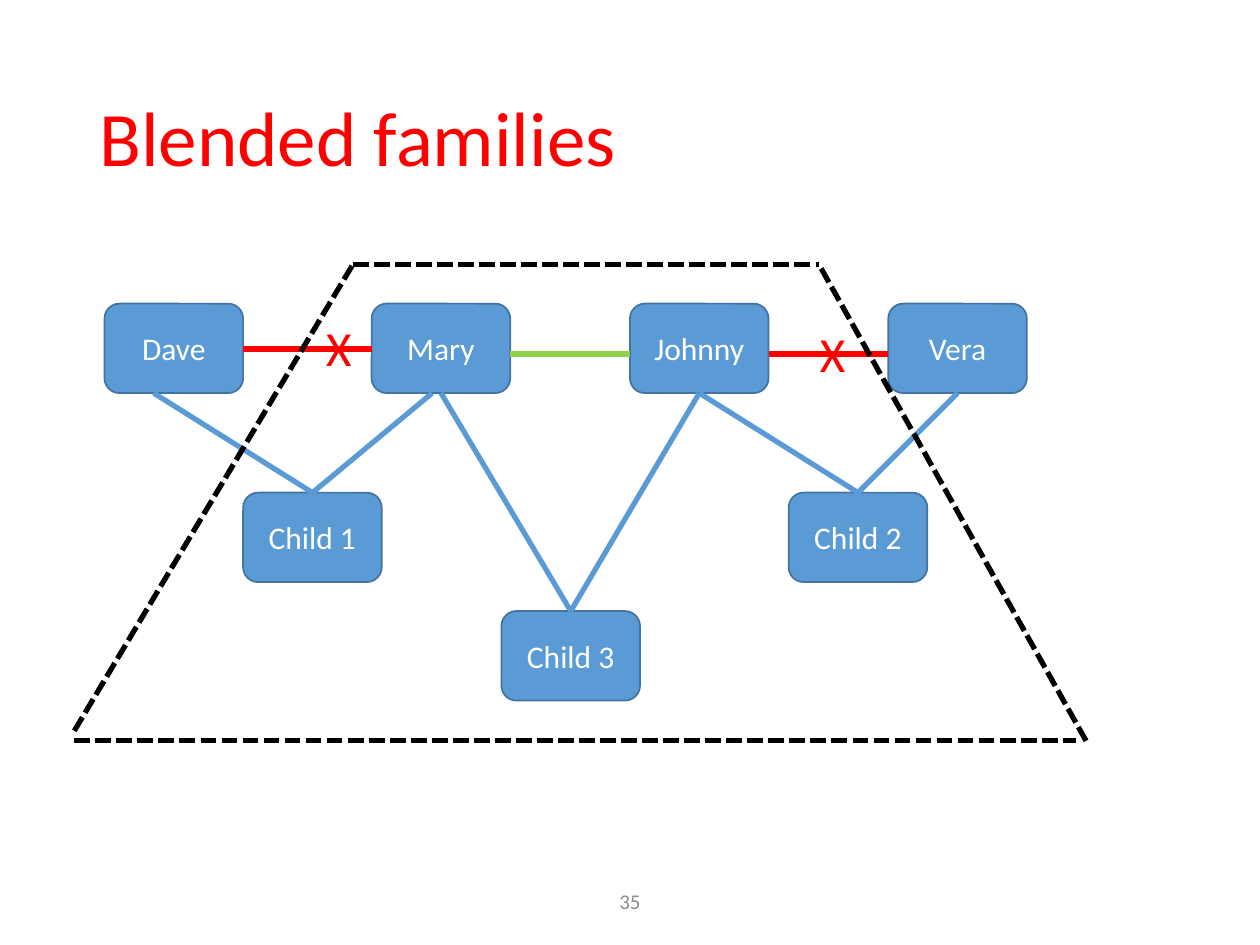
"""Build the blended families genogram slide on a grid of tenths of an inch."""
from dataclasses import dataclass

import pptx
import pptx.dml.color
import pptx.enum.dml
import pptx.enum.shapes
import pptx.enum.text
import pptx.util
from pptx.oxml.ns import qn
from lxml import etree

ALIGN = pptx.enum.text.PP_ALIGN
ANCHOR = pptx.enum.text.MSO_ANCHOR
BOX_COLS, BOX_ROWS = 11, 7.1


@dataclass(frozen=True)
class Theme:
    font: str = "Calibri"
    alert: str = "FF0000"
    person: str = "5B9BD5"
    outline: str = "43739E"
    couple: str = "92D050"
    household: str = "000000"
    light: str = "FFFFFF"
    muted: str = "8C8C8C"
    title_size: int = 44
    mark_size: int = 28
    name_size: int = 18
    number_size: int = 12
    thin: int = 1
    thick: int = 3


class Genogram:
    def __init__(self, theme, columns=100, rows=75):
        self.theme = theme
        self.deck = pptx.Presentation()
        self.deck.slide_width = pptx.util.Inches(10)
        self.deck.slide_height = pptx.util.Inches(7.5)
        self.column = self.deck.slide_width / columns
        self.row = self.deck.slide_height / rows
        self.slide = self.deck.slides.add_slide(self.deck.slide_layouts[6])

    def place(self, column, row):
        return round(column * self.column), round(row * self.row)

    def colour(self, value):
        return pptx.dml.color.RGBColor.from_string(value)

    def add_words(self, frame, words, size, colour, align, anchor):
        frame.word_wrap = True
        frame.vertical_anchor = anchor
        paragraph = frame.paragraphs[0]
        paragraph.alignment = align
        run = paragraph.add_run()
        run.text = words
        run.font.name = self.theme.font
        run.font.size = pptx.util.Pt(size)
        run.font.color.rgb = self.colour(colour)
        return paragraph

    def label(self, words, corner, extent, size, colour,
              align=ALIGN.LEFT, anchor=ANCHOR.MIDDLE):
        box = self.slide.shapes.add_textbox(*self.place(*corner), *self.place(*extent))
        return self.add_words(box.text_frame, words, size, colour, align, anchor)

    def person(self, name, corner):
        box = self.slide.shapes.add_shape(
            pptx.enum.shapes.MSO_SHAPE.ROUNDED_RECTANGLE,
            *self.place(*corner), *self.place(BOX_COLS, BOX_ROWS))
        box.shadow.inherit = False
        box.fill.solid()
        box.fill.fore_color.rgb = self.colour(self.theme.person)
        box.line.color.rgb = self.colour(self.theme.outline)
        box.line.width = pptx.util.Pt(self.theme.thin)
        self.add_words(box.text_frame, name, self.theme.name_size, self.theme.light,
                       ALIGN.CENTER, ANCHOR.MIDDLE)

    def tie(self, start, end, colour, dashed=False):
        tie = self.slide.shapes.add_connector(
            pptx.enum.shapes.MSO_CONNECTOR.STRAIGHT, *self.place(*start), *self.place(*end))
        tie.line.color.rgb = self.colour(colour)
        tie.line.width = pptx.util.Pt(self.theme.thick)
        if dashed:
            tie.line.dash_style = pptx.enum.dml.MSO_LINE.SQUARE_DOT
        etree.SubElement(tie._element.spPr, qn("a:effectLst"))

    def save(self):
        self.deck.save("out.pptx")


def main():
    theme = Theme()
    chart = Genogram(theme)
    title = chart.label("Blended families", (6.9, 4), (86.2, 14.5),
                        theme.title_size, theme.alert)
    title.line_spacing = 0.9
    chart.label("35", (33.1, 69.5), (33.8, 4), theme.number_size, theme.muted, ALIGN.CENTER)

    parent_row, child_row, shared_row = 24.1, 39.1, 48.5
    people = {
        "Dave": (8.3, parent_row),
        "Mary": (29.5, parent_row),
        "Johnny": (50, parent_row),
        "Vera": (70.5, parent_row),
        "Child 1": (19.3, child_row),
        "Child 2": (62.6, child_row),
        "Child 3": (39.8, shared_row),
    }
    for name, corner in people.items():
        chart.person(name, corner)

    couples = [
        ("Dave", "Mary", 27.7, theme.alert),
        ("Mary", "Johnny", 28.1, theme.couple),
        ("Johnny", "Vera", 28.1, theme.alert),
    ]
    for left, right, row, colour in couples:
        chart.tie((people[left][0] + BOX_COLS, row), (people[right][0], row), colour)

    middle = BOX_COLS / 2
    descents = [
        ("Dave", 3.9, "Child 1"),
        ("Mary", 4.8, "Child 1"),
        ("Mary", middle, "Child 3"),
        ("Johnny", middle, "Child 3"),
        ("Johnny", middle, "Child 2"),
        ("Vera", middle, "Child 2"),
    ]
    for parent, offset, child in descents:
        column, row = people[child]
        chart.tie((people[parent][0] + offset, parent_row + BOX_ROWS),
                  (column + middle, row), theme.person)

    top_left, top_right = (28, 21), (65, 21)
    household = [
        (top_left, top_right),
        ((5.9, 58), top_left),
        ((86.2, 58.8), top_right),
        ((5.9, 58.8), (85.4, 58.8)),
    ]
    for start, end in household:
        chart.tie(start, end, theme.household, dashed=True)

    for corner in ((24.9, 24.7), (64.1, 25.2)):
        chart.label("X", corner, (4.3, 5.7), theme.mark_size, theme.alert, anchor=ANCHOR.TOP)
    chart.save()


if __name__ == "__main__":
    main()
